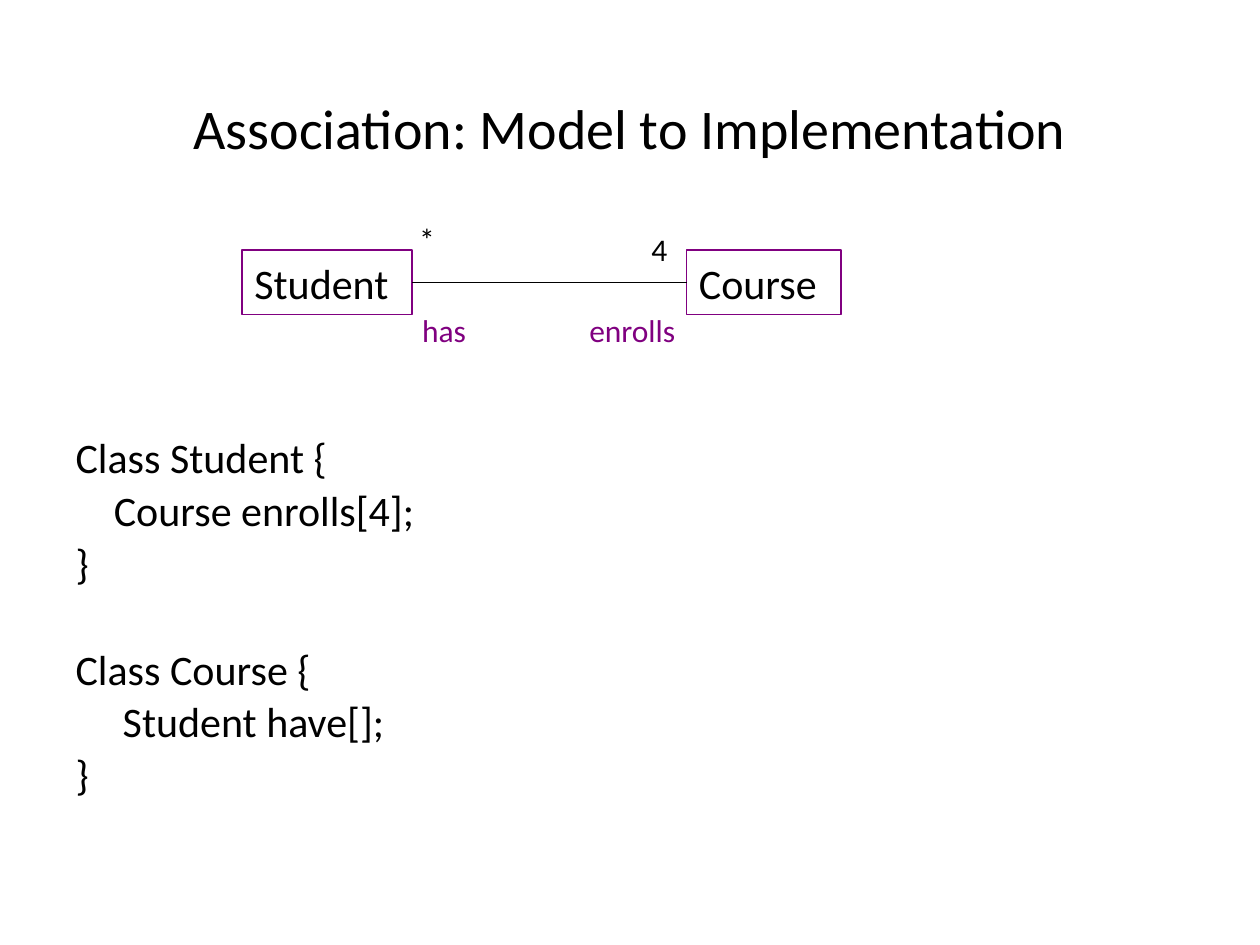
"""Build the slide that turns a class association into code."""
from lxml.etree import SubElement
from pptx import Presentation
from pptx.dml.color import RGBColor
from pptx.enum.shapes import MSO_CONNECTOR, MSO_SHAPE
from pptx.enum.text import MSO_ANCHOR, MSO_AUTO_SIZE, PP_ALIGN
from pptx.oxml.ns import qn
from pptx.util import Cm, Pt

BLACK = RGBColor(0x00, 0x00, 0x00)
PURPLE = RGBColor(0x80, 0x00, 0x80)


def style(paragraph, size, color=BLACK, align=PP_ALIGN.LEFT):
    paragraph.alignment = align
    for run in paragraph.runs:
        run.font.name = "Calibri"
        run.font.size = Pt(size)
        run.font.color.rgb = color


def place(shape, left, top, width, height):
    shape.left, shape.top = Cm(left), Cm(top)
    shape.width, shape.height = Cm(width), Cm(height)


presentation = Presentation()
presentation.slide_width, presentation.slide_height = Cm(25.4), Cm(19.05)
slide = presentation.slides.add_slide(presentation.slide_layouts[1])

heading = slide.shapes.title
place(heading, 1.27, 1.07, 22.86, 2.97)
heading.text_frame.text = "Association: Model to Implementation"
heading.text_frame.vertical_anchor = MSO_ANCHOR.MIDDLE
style(heading.text_frame.paragraphs[0], 32, align=PP_ALIGN.CENTER)

code = slide.placeholders[1]
place(code, 1.27, 8.69, 22.66, 8.26)
code.text_frame.auto_size = MSO_AUTO_SIZE.NONE
CODE_LINES = [
    ("Class Student {", 0, 4.2),
    ("Course enrolls[4];", 0.77, 4.2),
    ("}", 0, 4.2),
    ("Class Course {", 0, 34.8),
    ("Student have[];", 0.95, 4.2),
    ("}", 0, 4.2),
]
code.text_frame.text = "\n".join(line for line, _, _ in CODE_LINES)
for paragraph, (_, indent, gap) in zip(code.text_frame.paragraphs, CODE_LINES):
    style(paragraph, 24)
    paragraph.line_spacing = 0.9
    paragraph.space_before = Pt(gap)
    properties = paragraph._p.get_or_add_pPr()
    properties.set("marL", str(Cm(indent)))
    properties.set("indent", "0")
    SubElement(properties, qn("a:buNone"))

classes = []
for name, left, width in [("Student", 4.88, 3.43), ("Course", 13.84, 3.12)]:
    class_box = slide.shapes.add_shape(
        MSO_SHAPE.RECTANGLE, Cm(left), Cm(5.04), Cm(width), Cm(1.3))
    class_box.shadow.inherit = False
    class_box.fill.background()
    class_box.line.color.rgb = PURPLE
    class_box.line.width = Pt(1)
    class_box.text_frame.text = name
    class_box.text_frame.word_wrap = False
    style(class_box.text_frame.paragraphs[0], 24)
    classes.append(class_box)

student, course = classes
association = slide.shapes.add_connector(MSO_CONNECTOR.STRAIGHT, 0, 0, 0, 0)
association.begin_connect(student, 3)
association.end_connect(course, 1)
association.line.color.rgb = BLACK
association.line.width = Pt(0.75)
SubElement(association._element.spPr, qn("a:effectLst"))

for label, left, top, width, color in [
    ("enrolls", 11.63, 6.15, 2.34, PURPLE),
    ("has", 8.26, 6.15, 1.47, PURPLE),
    ("*", 8.2, 4.32, 0.86, BLACK),
    ("4", 12.88, 4.52, 0.86, BLACK),
]:
    role = slide.shapes.add_textbox(Cm(left), Cm(top), Cm(width), Cm(1.02))
    role.text_frame.text = label
    role.text_frame.word_wrap = False
    style(role.text_frame.paragraphs[0], 18, color)

presentation.save("out.pptx")
